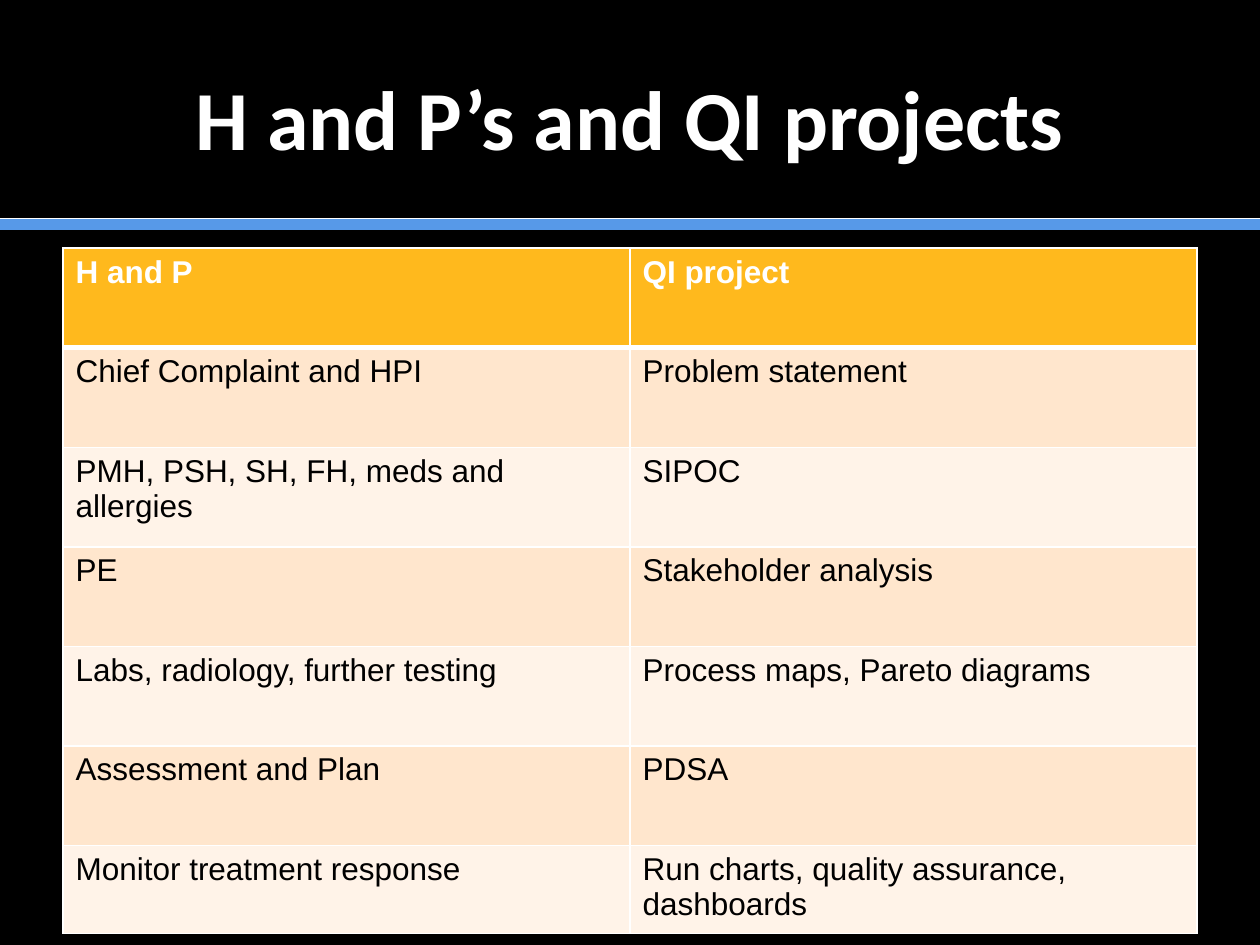
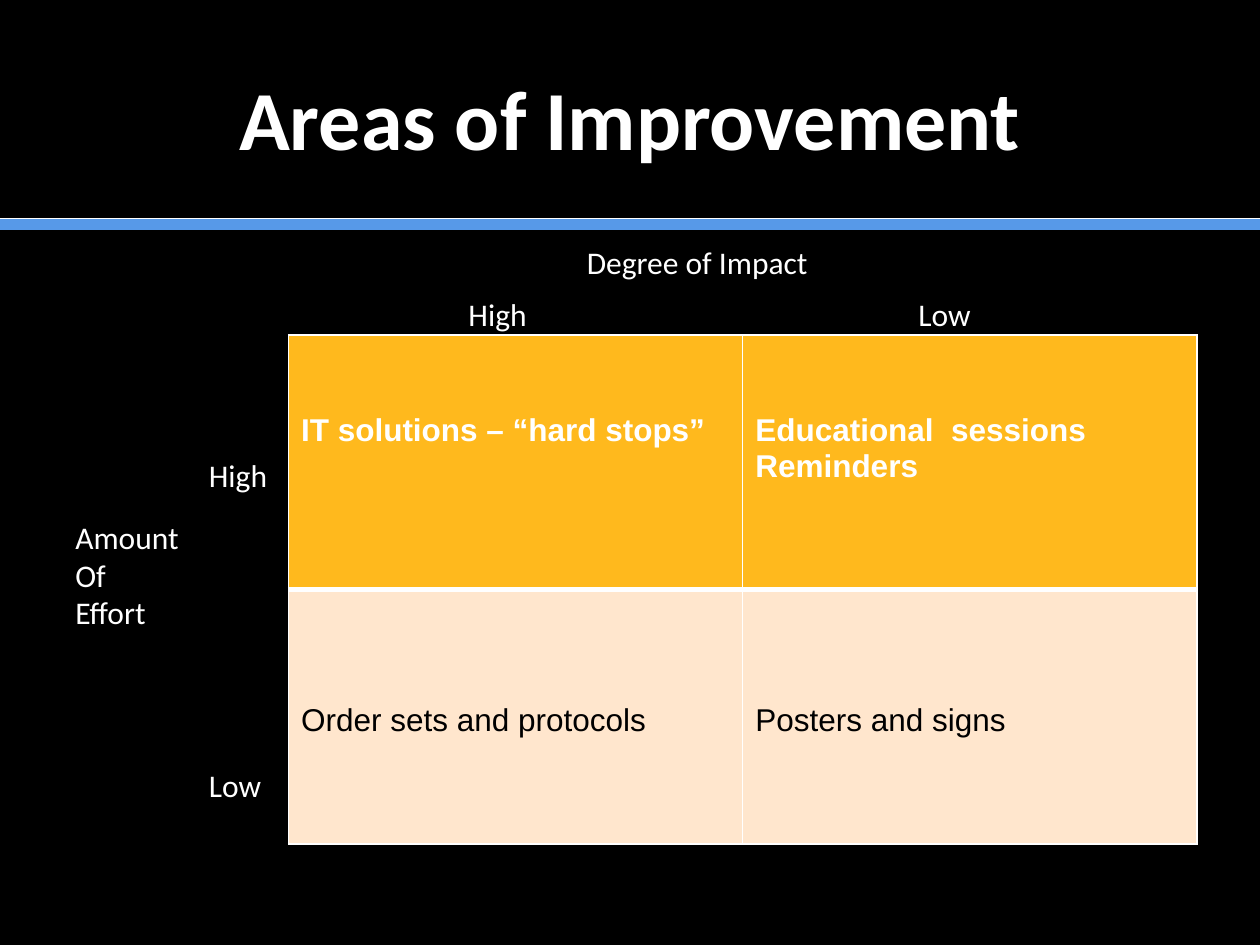
"""Build two slides comparing clinical work-ups with quality improvement projects."""
from lxml.etree import SubElement
from pptx import Presentation
from pptx.dml.color import RGBColor
from pptx.enum.shapes import MSO_CONNECTOR
from pptx.enum.text import MSO_ANCHOR, PP_ALIGN
from pptx.oxml import parse_xml
from pptx.oxml.ns import nsdecls, qn
from pptx.util import Inches, Pt

COLORS = {
    "background": "000000",
    "white": "FFFFFF",
    "black": "000000",
    "rule": "5799E8",
    "header": "FFB91D",
    "band": "FFE6CD",
    "light": "FFF3E8",
}


def write(frame, lines, font, size, color, bold=False, align=PP_ALIGN.LEFT):
    for index, line in enumerate(lines):
        paragraph = frame.paragraphs[0] if index == 0 else frame.add_paragraph()
        paragraph.alignment = align
        run = paragraph.add_run()
        run.text = line
        run.font.name = font
        run.font.size = Pt(size)
        run.font.bold = bold
        run.font.color.rgb = RGBColor.from_string(COLORS[color])


def add_grid(slide, box, heights, top_margins, rows):
    grid = slide.shapes.add_table(len(rows), len(rows[0]), *map(Inches, box)).table
    for row_index, row in enumerate(rows):
        grid.rows[row_index].height = Inches(heights[row_index])
        is_header = row_index == 0
        fill = "header" if is_header else "band" if row_index % 2 else "light"
        for column_index, lines in enumerate(row):
            cell = grid.cell(row_index, column_index)
            cell.margin_top = Inches(top_margins[row_index])
            cell.fill.solid()
            cell.fill.fore_color.rgb = RGBColor.from_string(COLORS[fill])
            write(cell.text_frame, lines, "Arial", 18,
                  "white" if is_header else "black", bold=is_header)
            widths = {"L": 1, "R": 1, "T": 3 if row_index == 1 else 1,
                      "B": 3 if is_header else 1}
            properties = cell._tc.get_or_add_tcPr()
            for position, (side, width) in enumerate(widths.items()):
                properties.insert(position, parse_xml(
                    f'<a:ln{side} {nsdecls("a")} w="{Pt(width)}"><a:solidFill>'
                    f'<a:srgbClr val="{COLORS["white"]}"/></a:solidFill></a:ln{side}>'))


deck = Presentation()
deck.slide_width, deck.slide_height = Inches(10), Inches(7.5)

slides = []
for heading in ("H and P’s and QI projects", "Areas of Improvement"):
    slide = deck.slides.add_slide(deck.slide_layouts[6])
    slide.background.fill.solid()
    slide.background.fill.fore_color.rgb = RGBColor.from_string(COLORS["background"])
    for y, color, width in ((1.78, "rule", 7), (1.73, "white", 0.5)):
        rule = slide.shapes.add_connector(
            MSO_CONNECTOR.STRAIGHT, Inches(0), Inches(y), Inches(10), Inches(y))
        rule.line.color.rgb = RGBColor.from_string(COLORS[color])
        rule.line.width = Pt(width)
        SubElement(rule._element.spPr, qn("a:effectLst"))
    title = slide.shapes.add_textbox(*map(Inches, (0.5, 0.3, 9, 1.25))).text_frame
    title.word_wrap = True
    title.vertical_anchor = MSO_ANCHOR.MIDDLE
    write(title, [heading], "Calibri", 48, "white", bold=True, align=PP_ALIGN.CENTER)
    slides.append(slide)
comparison, improvement = slides

parallels = [
    ("H and P", "QI project"),
    ("Chief Complaint and HPI", "Problem statement"),
    ("PMH, PSH, SH, FH, meds and allergies", "SIPOC"),
    ("PE", "Stakeholder analysis"),
    ("Labs, radiology, further testing", "Process maps, Pareto diagrams"),
    ("Assessment and Plan", "PDSA"),
    ("Monitor treatment response", "Run charts, quality assurance, dashboards"),
]
add_grid(comparison, (0.5, 1.97, 9, 5.4), [0.79] * 6 + [0.66], [0.05] * 7,
         [[[text] for text in pair] for pair in parallels])

interventions = [
    [["IT solutions – “hard stops”"], ["Educational  sessions", "Reminders"]],
    [["Order sets and protocols"], ["Posters and signs"]],
]
add_grid(improvement, (2.29, 2.66, 7.21, 4.04), [2.02] * 2, [0.62, 0.9], interventions)

axis_labels = [
    (["Amount", "Of", "Effort"], (0.5, 4.06, 1.06, 1.31), True),
    (["Degree of Impact"], (4.56, 1.88, 4.53, 0.4), True),
    (["High"], (1.56, 3.57, 0.7, 0.4), False),
    (["High"], (3.62, 2.29, 0.7, 0.4), False),
    (["Low"], (7.19, 2.29, 0.65, 0.4), False),
    (["Low"], (1.56, 6.03, 0.65, 0.4), False),
]
for lines, box, wraps in axis_labels:
    label = improvement.shapes.add_textbox(*map(Inches, box)).text_frame
    label.word_wrap = wraps
    write(label, lines, "Calibri", 18, "white")

deck.save("out.pptx")
